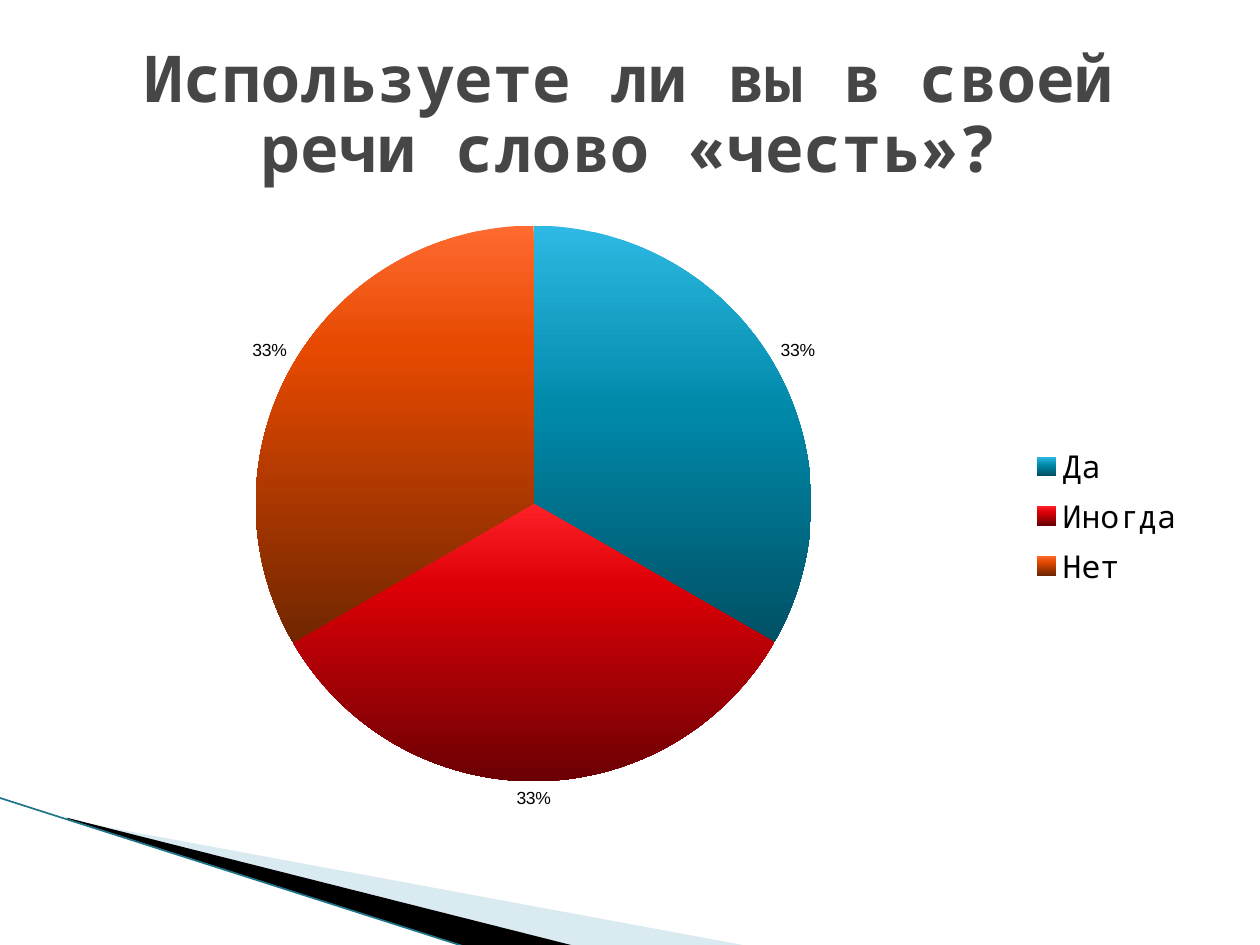
from lxml.etree import SubElement
from pptx import Presentation
from pptx.chart.data import CategoryChartData
from pptx.dml.color import RGBColor
from pptx.enum.chart import XL_CHART_TYPE, XL_LABEL_POSITION, XL_LEGEND_POSITION
from pptx.enum.shapes import MSO_CONNECTOR
from pptx.enum.text import MSO_ANCHOR, MSO_AUTO_SIZE, PP_ALIGN
from pptx.oxml import parse_xml
from pptx.oxml.ns import nsdecls, qn
from pptx.util import Inches, Pt

COLS = 100
FONT = "Noto Sans Mono"
TITLE = "Используете ли вы в своей речи слово «честь»?"
ANSWERS = {
    "Да": ("2DB9E3", "0088A8", "005064", 45),
    "Иногда": ("FF2028", "DC0006", "6A0004", 30),
    "Нет": ("FF6A30", "E64900", "702600", 30),
}


def rgb(value):
    return RGBColor.from_string(value)


def grid(*lengths):
    return [Inches(10 * length / COLS) for length in lengths]


def set_format(target, values):
    for name, value in values.items():
        setattr(target, name, value)


def set_font(font, size, color, name=FONT, bold=False):
    set_format(font, {"size": Pt(size), "name": name, "bold": bold})
    font.color.rgb = rgb(color)


def add_title(s):
    sp = s.shapes.title
    set_format(sp, dict(zip(("left", "top", "width", "height"), grid(5, 3, 90, 12.5))))
    tf = sp.text_frame
    set_format(tf, {"vertical_anchor": MSO_ANCHOR.MIDDLE, "word_wrap": True,
                    "auto_size": MSO_AUTO_SIZE.NONE})
    p = tf.paragraphs[0]
    set_format(p, {"alignment": PP_ALIGN.CENTER, "line_spacing": 0.9})
    r = p.add_run()
    r.text = TITLE
    set_font(r.font, 36.9, "464646", bold=True)


def add_wedge(s, points, color, alpha=None):
    start, *rest = [grid(*point) for point in points]
    builder = s.shapes.build_freeform(*start)
    builder.add_line_segments(rest, close=True)
    sp = builder.convert_to_shape()
    sp.shadow.inherit = False
    sp.line.fill.background()
    sp.fill.solid()
    sp.fill.fore_color.rgb = rgb(color)
    if alpha is not None:
        clr = sp.fill._xPr.find(".//" + qn("a:srgbClr"))
        SubElement(clr, qn("a:alpha"), val=str(alpha * 1000))


def add_line(s, start, end, color, width):
    line = s.shapes.add_connector(MSO_CONNECTOR.STRAIGHT, *grid(*start, *end))
    line.line.color.rgb = rgb(color)
    line.line.width = Pt(width)
    SubElement(line._element.spPr, qn("a:effectLst"))


def shade_slice(point, top, middle, bottom, share):
    fill = point.format.fill
    fill.gradient()
    old = fill._xPr.find(qn("a:gradFill"))
    stops = "".join(
        f'<a:gs pos="{pos * 1000}"><a:srgbClr val="{color}"/></a:gs>'
        for pos, color in ((0, top), (share, middle), (100, bottom)))
    new = parse_xml(f'<a:gradFill {nsdecls("a")} rotWithShape="1"><a:gsLst>{stops}</a:gsLst>'
                    '<a:lin ang="5400000" scaled="0"/></a:gradFill>')
    old.getparent().replace(old, new)
    point.format.line.fill.background()


def place_plot(chart, **shares):
    plot_area = chart._chartSpace.chart.plotArea
    for layout in plot_area.findall(qn("c:layout")):
        plot_area.remove(layout)
    modes = "".join(f'<c:{tag} val="{value}"/>' for tag, value in
                    {"layoutTarget": "inner", "xMode": "edge", "yMode": "edge", **shares}.items())
    plot_area.insert(0, parse_xml(
        f'<c:layout {nsdecls("c")}><c:manualLayout>{modes}</c:manualLayout></c:layout>'))


def add_pie(s):
    data = CategoryChartData(number_format="0%")
    data.categories = list(ANSWERS)
    data.add_series("Series 1", [0.33] * len(ANSWERS))
    chart = s.shapes.add_chart(XL_CHART_TYPE.PIE, *grid(5, 16.2, 90, 49.5), data).chart
    set_format(chart, {"has_title": False, "has_legend": True})
    set_font(chart.font, 18, "000000")
    set_format(chart.legend, {"position": XL_LEGEND_POSITION.RIGHT, "include_in_layout": False})
    set_font(chart.legend.font, 18, "000000")
    plot = chart.plots[0]
    set_format(plot, {"vary_by_categories": True, "has_data_labels": True})
    set_format(plot.data_labels, {
        "show_value": True, "show_percentage": False, "number_format": "0%",
        "number_format_is_linked": False, "position": XL_LABEL_POSITION.OUTSIDE_END})
    set_font(plot.data_labels.font, 10, "000000", "Liberation Sans")
    for i, shades in enumerate(ANSWERS.values()):
        shade_slice(plot.series[0].points[i], *shades)
    place_plot(chart, x=0.17, y=0.03, w=0.49, h=0.9)


def main():
    prs = Presentation()
    set_format(prs, {"slide_width": Inches(10), "slide_height": Inches(7.5)})
    s = prs.slides.add_slide(prs.slide_layouts[5])
    add_wedge(s, [(5.5, 65.1), (59.5, 75.1), (45.6, 75.1), (5.5, 65)], "A0CBDC", 40)
    add_wedge(s, [(5.3, 64.9), (45.7, 75.1), (37.2, 75.2), (5.4, 65)], "000000")
    add_line(s, (-0.1, 63.3), (37.1, 75.2), "1F7489", 0.95)
    add_pie(s)
    add_title(s)
    prs.save("out.pptx")


if __name__ == "__main__":
    main()
